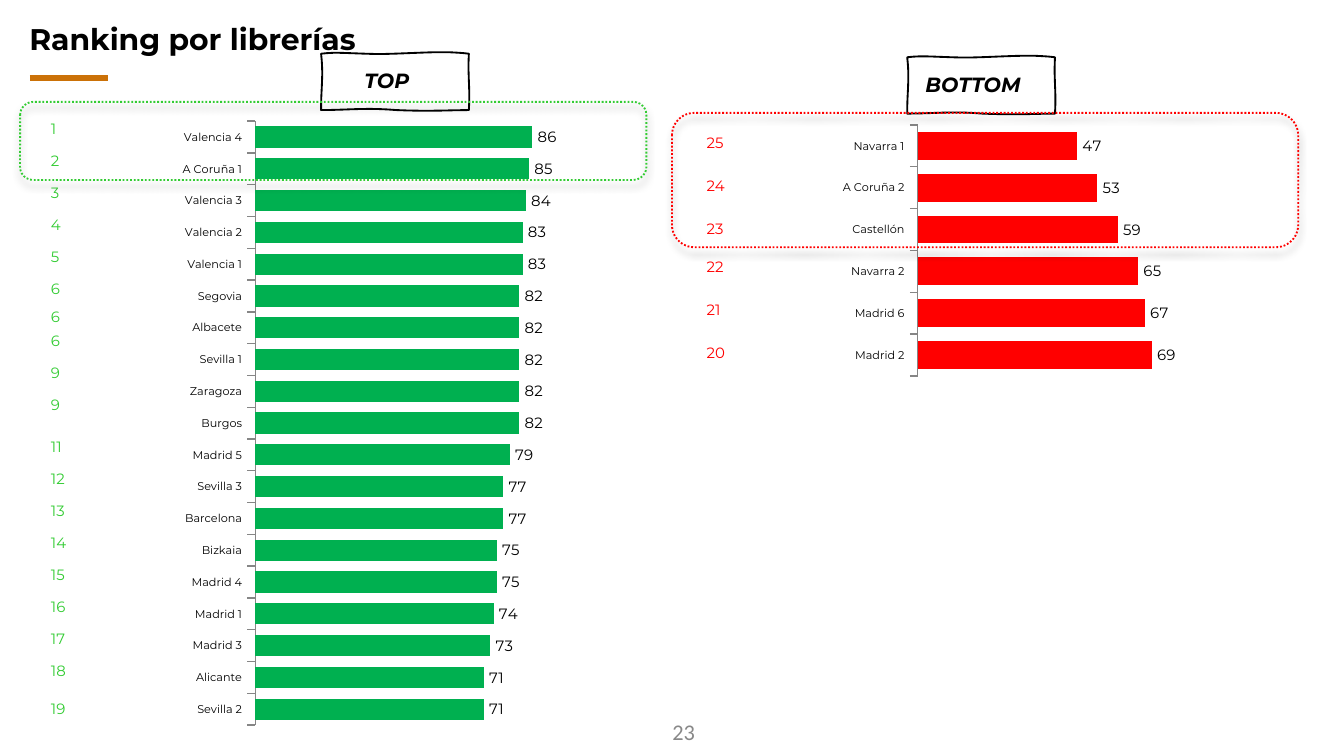
from lxml import etree
from pptx import Presentation
from pptx import util as u
from pptx.chart.data import CategoryChartData
from pptx.dml.color import RGBColor
from pptx.enum import chart as ch
from pptx.enum import dml, shapes, text
from pptx.oxml import parse_xml
from pptx.oxml.ns import nsdecls, qn

THEME = dict(
    font="Montserrat", number_font="Calibri",
    ink="000000", accent="CB7107", muted="888888", axis="868686",
    title=16, tag=11, body=8, category=6, number=12,
)
TITLE = "Ranking por librerías"
PAGE_NUMBER = "23"

PANELS = [
    dict(
        tag="TOP", tag_at=(172, 28.8), bar="00B050", accent="33CC33",
        chart_at=(35.3, 39.6, 279.4, 351.4), plot=(0.363, 0.072, 0.618, 0.921), maximum=100,
        rows=[("Sevilla 2", 71), ("Alicante", 71), ("Madrid 3", 73), ("Madrid 1", 74),
              ("Madrid 4", 75), ("Bizkaia", 75), ("Barcelona", 77), ("Sevilla 3", 77),
              ("Madrid 5", 79), ("Burgos", 82), ("Zaragoza", 82), ("Sevilla 1", 82),
              ("Albacete", 82), ("Segovia", 82), ("Valencia 1", 83), ("Valencia 2", 83),
              ("Valencia 3", 84), ("A Coruña 1", 85), ("Valencia 4", 86)],
        rank_left=20.2, rank_pitch=17.1,
        rank_groups=[(60.5, [1, 2, 3, 4, 5, 6]), (161.3, [6]), (174.2, [6, 9, 9]),
                     (231, [11, 12, 13, 14, 15, 16, 17, 18]), (371.5, [19])],
        highlight_at=(10.8, 54.6, 335.5, 41.8),
    ),
    dict(
        tag="BOTTOM", tag_at=(486, 30.7), bar="FF0000", accent="FF0000",
        chart_at=(385.9, 63.4, 259.2, 141.8), plot=(0.408, 0.025, 0.561, 0.949), maximum=80,
        rows=[("Madrid 2", 69), ("Madrid 6", 67), ("Navarra 2", 65),
              ("Castellón", 59), ("A Coruña 2", 53), ("Navarra 1", 47)],
        rank_left=371.5, rank_pitch=23,
        rank_groups=[(68, [25, 24, 23]), (134.6, [22, 21, 20])],
        highlight_at=(360, 60.5, 335.5, 72),
    ),
]

WAVY_FRAME = [
    ((10.8, -1.4), (20.9, 0.7), (38.9, 0)),
    ((57.6, -0.7), (67.7, -1.4), (79.2, 0)),
    ((78.5, 11.5), (79.9, 17.3), (79.2, 30.2)),
    ((70.6, 30.2), (58.3, 31), (40.3, 30.2)),
    ((23, 28.8), (14.4, 30.2), (0, 30.2)),
    ((0, 18), (1.4, 10.8), (0, 0)),
]
CURVE_STEPS = 10


def points(values):
    return [u.Pt(value) for value in values]


def color(value):
    return RGBColor.from_string(value)


def style(font, size, fill, name=THEME["font"], bold=False, italic=False):
    font.name, font.size, font.bold, font.italic = name, u.Pt(size), bold, italic
    font.color.rgb = color(fill)


def add_text(page, place, wording, align=text.PP_ALIGN.LEFT, **look):
    box = page.shapes.add_textbox(*points(place))
    frame = box.text_frame
    frame.word_wrap = True
    frame.text = wording
    para = frame.paragraphs[0]
    para.alignment = align
    style(para.runs[0].font, **look)
    return box


def add_title(page):
    title = page.shapes.title
    title.left, title.top, title.width, title.height = points((8.6, 9.4, 702.7, 33.8))
    frame = title.text_frame
    frame.text = TITLE
    frame.auto_size = text.MSO_AUTO_SIZE.NONE
    frame.vertical_anchor = text.MSO_ANCHOR.TOP
    para = frame.paragraphs[0]
    para.alignment = text.PP_ALIGN.LEFT
    para.line_spacing = 0.9
    style(para.runs[0].font, THEME["title"], THEME["ink"], bold=True)
    rule = page.shapes.add_connector(shapes.MSO_CONNECTOR.STRAIGHT, *points((16, 41.8, 57.8, 41.8)))
    rule.line.color.rgb = color(THEME["accent"])
    rule.line.width = u.Pt(3)
    etree.SubElement(rule._element.spPr, qn("a:effectLst"))


def add_bars(page, panel):
    data = CategoryChartData(number_format="0")
    data.categories = [name for name, _ in panel["rows"]]
    data.add_series("Series 1", [value for _, value in panel["rows"]])
    chart = page.shapes.add_chart(
        ch.XL_CHART_TYPE.BAR_CLUSTERED, *points(panel["chart_at"]), data).chart
    chart.has_legend = chart.has_title = False
    style(chart.font, THEME["body"], THEME["ink"])

    plot = chart.plots[0]
    plot.gap_width = 50
    plot.vary_by_categories = False
    fill = plot.series[0].format.fill
    fill.solid()
    fill.fore_color.rgb = color(panel["bar"])
    plot.has_data_labels = True
    labels = plot.data_labels
    labels.show_value = True
    labels.number_format, labels.number_format_is_linked = "0", False
    labels.position = ch.XL_LABEL_POSITION.OUTSIDE_END

    values = chart.value_axis
    values.minimum_scale, values.maximum_scale = 0, panel["maximum"]
    values.has_major_gridlines = values.visible = False
    categories = chart.category_axis
    categories.major_tick_mark = ch.XL_TICK_MARK.OUTSIDE
    categories.format.line.color.rgb = color(THEME["axis"])
    style(categories.tick_labels.font, THEME["category"], THEME["ink"])

    area = chart._chartSpace.chart.plotArea
    for old in area.findall(qn("c:layout")):
        area.remove(old)
    modes = '<c:layoutTarget val="inner"/><c:xMode val="edge"/><c:yMode val="edge"/>'
    sizes = "".join(f'<c:{key} val="{value}"/>' for key, value in zip("xywh", panel["plot"]))
    area.insert(0, parse_xml(
        f'<c:layout {nsdecls("c")}><c:manualLayout>{modes}{sizes}</c:manualLayout></c:layout>'))


def curve_points(start, curves):
    for first, second, end in curves:
        for step in range(1, CURVE_STEPS + 1):
            t = step / CURVE_STEPS
            weights = ((1 - t) ** 3, 3 * t * (1 - t) ** 2, 3 * t * t * (1 - t), t ** 3)
            yield tuple(sum(w * p[i] for w, p in zip(weights, (start, first, second, end)))
                        for i in (0, 1))
        start = end


def add_tag(page, panel):
    left, top = panel["tag_at"]
    outline = [points((left + x, top + y)) for x, y in curve_points((0, 0), WAVY_FRAME)]
    builder = page.shapes.build_freeform(*points((left, top)))
    builder.add_line_segments(outline, close=True)
    frame = builder.convert_to_shape()
    frame.fill.background()
    frame.line.color.rgb = color(THEME["ink"])
    frame.line.width = u.Pt(1)
    frame.shadow.inherit = False
    add_text(page, (left - 36, top + 4.2, 142.6, 20.9), panel["tag"], text.PP_ALIGN.CENTER,
             size=THEME["tag"], fill=THEME["ink"], bold=True, italic=True)


def add_ranks(page, panel):
    for top, ranks in panel["rank_groups"]:
        for index, rank in enumerate(ranks):
            width = 18.7 if rank < 10 else 28
            place = (panel["rank_left"], top + index * panel["rank_pitch"], width, 17.3)
            add_text(page, place, str(rank), size=THEME["body"], fill=panel["accent"])


def add_highlight(page, panel):
    box = page.shapes.add_shape(
        shapes.MSO_SHAPE.ROUNDED_RECTANGLE, *points(panel["highlight_at"]))
    box.fill.background()
    box.line.color.rgb = color(panel["accent"])
    box.line.width = u.Pt(1)
    box.line.dash_style = dml.MSO_LINE.ROUND_DOT
    box.shadow.inherit = False
    box._element.spPr.find(qn("a:effectLst")).append(parse_xml(
        f'<a:outerShdw {nsdecls("a")} blurRad="{u.Pt(4)}" dist="{u.Pt(3)}" dir="5400000" '
        'rotWithShape="0"><a:srgbClr val="000000"><a:alpha val="40000"/></a:srgbClr></a:outerShdw>'))


def main():
    deck = Presentation()
    deck.slide_width, deck.slide_height = points((720, 405))
    page = deck.slides.add_slide(deck.slide_layouts[5])
    add_title(page)
    number = add_text(page, (314.6, 380.9, 64.8, 21.6), PAGE_NUMBER, text.PP_ALIGN.RIGHT,
                      size=THEME["number"], fill=THEME["muted"], name=THEME["number_font"])
    number.text_frame.vertical_anchor = text.MSO_ANCHOR.MIDDLE
    for add_part in (add_bars, add_tag, add_ranks, add_highlight):
        for panel in PANELS:
            add_part(page, panel)
    deck.save("out.pptx")


if __name__ == "__main__":
    main()
